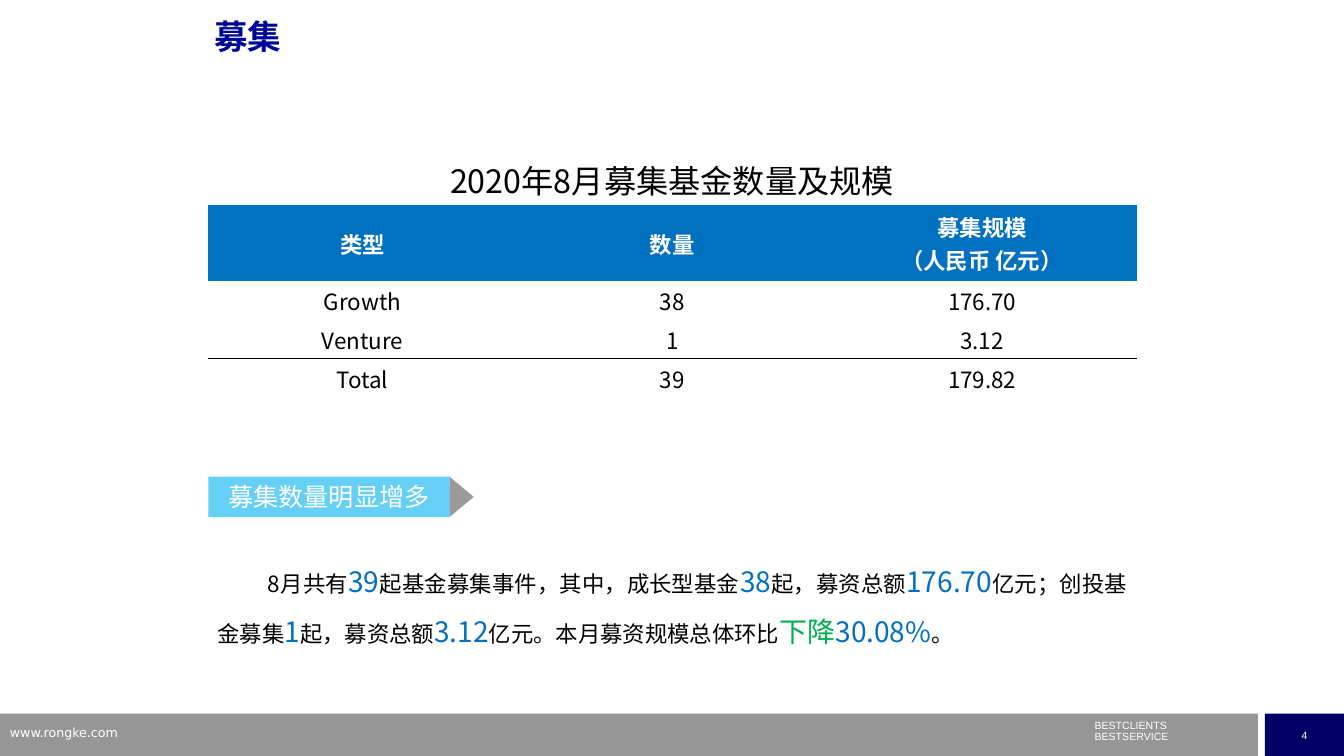
from lxml import etree
from pptx import Presentation, util as u
from pptx.dml.color import RGBColor
from pptx.enum import shapes, text
from pptx.oxml.ns import qn

NOTO, BLUE, GREEN, BLACK, WHITE = "Noto Sans CJK SC", "0070C0", "00B050", "000000", "FFFFFF"


def paint(fill, tint, alpha=100):
    fill.solid()
    fill.fore_color.rgb = RGBColor.from_string(tint)
    if alpha < 100:
        node = fill._xPr.find(qn("a:solidFill"))[0]
        etree.SubElement(node, qn("a:alpha")).set("val", str(alpha * 1000))


def write(par, words, size, tint, face=NOTO, bold=False):
    run = par.add_run()
    run.text = words
    font = run.font
    font.size, font.name, font.bold = u.Pt(size), face, bold
    paint(font.fill, tint)
    etree.SubElement(run._r.rPr, qn("a:ea")).set("typeface", NOTO)


# Slide with a grid of 100 columns and 100 rows
deck = Presentation()
deck.slide_width, deck.slide_height = u.Inches(13.33), u.Inches(7.5)
col, row = deck.slide_width / 100, deck.slide_height / 100
slide = deck.slides.add_slide(deck.slide_layouts[5])

# Title
title = slide.shapes.title
title.left, title.top = int(15.2 * col), int(2.1 * row)
title.width, title.height = int(67.5 * col), int(9.3 * row)
frame = title.text_frame
frame.auto_size = text.MSO_AUTO_SIZE.NONE
frame.vertical_anchor = text.MSO_ANCHOR.TOP
par = frame.paragraphs[0]
par.alignment, par.line_spacing = text.PP_ALIGN.LEFT, 0.9
write(par, "募集", 24, "000798", "Arial", True)

# Footer blocks and arrow label
RECT, TIP = shapes.MSO_SHAPE.RECTANGLE, shapes.MSO_SHAPE.ISOSCELES_TRIANGLE
label = slide.shapes.add_group_shape()
for home, kind, x, y, w, h, tint, alpha, turn, words, size, face in [
    (slide, RECT, 0, 94.4, 93.6, 5.6, "969696", 100, 0, "", 0, ""),
    (slide, RECT, 94.12, 94.4, 5.88, 5.6, "000066", 100, 0, "4", 7.5, "Arial"),
    (label, RECT, 15.5, 63.05, 17.95, 5.35, "00B0F0", 60, 0, "募集数量明显增多", 18, NOTO),
    (label, TIP, 32.85, 64.13, 3, 3.2, "595959", 60, 90, "", 0, ""),
]:
    block = home.shapes.add_shape(kind, int(x * col), int(y * row), int(w * col), int(h * row))
    block.shadow.inherit = False
    block.line.fill.background()
    block.rotation = turn
    paint(block.fill, tint, alpha)
    if words:
        frame = block.text_frame
        frame.vertical_anchor = text.MSO_ANCHOR.MIDDLE
        frame.paragraphs[0].alignment = text.PP_ALIGN.CENTER
        write(frame.paragraphs[0], words, size, WHITE, face)

# Text boxes: slogan, web address, summary
frames = []
for x, y, w, h in [(80.7, 95.2, 15, 4), (0, 95.2, 24, 3.5), (15.45, 71.73, 69.15, 14)]:
    box = slide.shapes.add_textbox(int(x * col), int(y * row), int(w * col), int(h * row))
    box.text_frame.word_wrap = True
    frames.append(box.text_frame)
slogan, web, story = frames

first, second = slogan.paragraphs[0], slogan.add_paragraph()
second.space_before = u.Pt(3)
for par, words in [(first, "BESTCLIENTS"), (second, "BESTSERVICE")]:
    par.line_spacing = 0.5
    write(par, words, 7.5, WHITE, "Arial")
write(web.paragraphs[0], "www.rongke.com", 9, WHITE, "DejaVu Sans")

par = story.paragraphs[0]
par.alignment, par.line_spacing = text.PP_ALIGN.JUSTIFY, 1.5
par._p.get_or_add_pPr().set("indent", str(u.Inches(0.5)))
for words, size, tint in [
    ("8月共有", 16, BLACK), ("39", 20, BLUE),
    ("起基金募集事件，其中，成长型基金", 16, BLACK), ("38", 20, BLUE),
    ("起，募资总额", 16, BLACK), ("176.70", 20, BLUE),
    ("亿元；创投基金募集", 16, BLACK), ("1", 20, BLUE),
    ("起，募资总额", 16, BLACK), ("3.12", 20, BLUE),
    ("亿元。本月募资规模总体环比", 16, BLACK), ("下降", 20, GREEN),
    ("30.08%", 20, BLUE), ("。", 16, BLACK),
]:
    write(par, words, size, tint)

# Table of funds
data = [
    ["2020年8月募集基金数量及规模"],
    ["类型", "数量", "募集规模\n（人民币 亿元）"],
    ["Growth", "38", "176.70"],
    ["Venture", "1", "3.12"],
    ["Total", "39", "179.82"],
]
highs = [6.8, 10.13, 5.07, 5.2, 5.07]
table = slide.shapes.add_table(5, 3, int(15.45 * col), int(20.27 * row),
                               int(69.15 * col), int(sum(highs) * row)).table
table.first_row = table.horz_banding = False
table._tbl.tblPr.find(qn("a:tableStyleId")).text = "{2D5ABB26-0587-4C30-8999-92F81FD0307C}"
table.cell(0, 0).merge(table.cell(0, 2))
for r, line in enumerate(data):
    table.rows[r].height = int(highs[r] * row)
    head = r == 1
    for c, words in enumerate(line):
        cell = table.cell(r, c)
        cell.vertical_anchor = text.MSO_ANCHOR.MIDDLE
        cell.margin_left = cell.margin_right = cell.margin_top = u.Inches(0.01)
        cell.margin_bottom = 0
        par = cell.text_frame.paragraphs[0]
        par.alignment = text.PP_ALIGN.CENTER
        for n, part in enumerate(words.split("\n")):
            if n:
                par.add_line_break()
            write(par, part, 16 if r else 23, WHITE if head else BLACK, bold=head)
        if head:
            paint(cell.fill, BLUE)
        else:
            cell.fill.background()
        # Rule between the funds and the total
        side = {3: "a:lnB", 4: "a:lnT"}.get(r)
        if side:
            edge = etree.Element(qn(side), w=str(u.Pt(1)))
            solid = etree.SubElement(edge, qn("a:solidFill"))
            etree.SubElement(solid, qn("a:srgbClr")).set("val", BLACK)
            cell._tc.tcPr.insert(0, edge)

deck.save("out.pptx")
